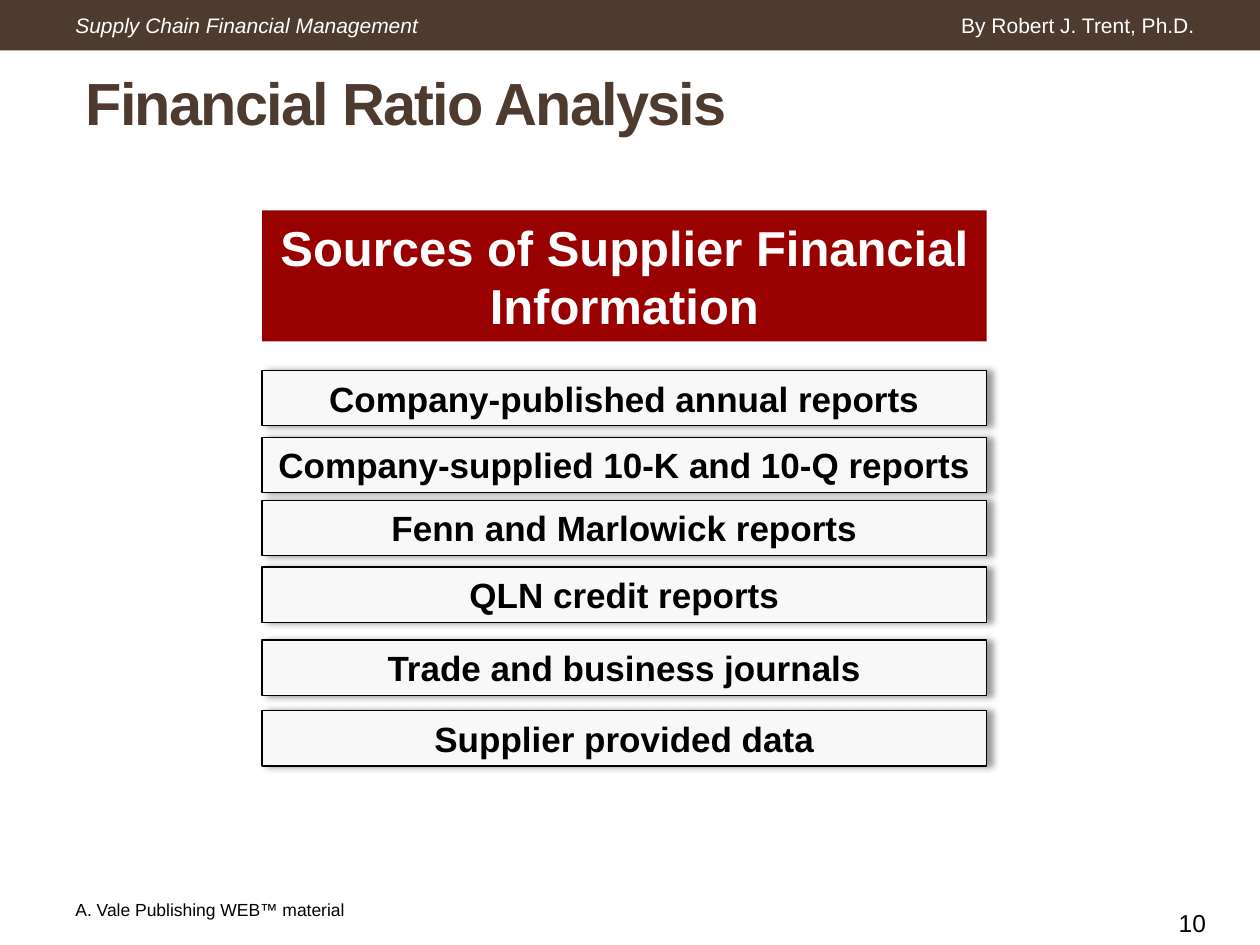
from pptx import Presentation
from pptx.dml.color import RGBColor
from pptx.enum.shapes import MSO_SHAPE
from pptx.enum.text import MSO_ANCHOR, MSO_AUTO_SIZE, PP_ALIGN
from pptx.oxml import parse_xml
from pptx.oxml.ns import nsdecls
from pptx.util import Inches, Pt

COLORS = {"brown": "4E3B30", "red": "990000", "pale": "F8F8F8",
          "white": "FFFFFF", "black": "000000"}
LEFT, CENTER, RIGHT = PP_ALIGN.LEFT, PP_ALIGN.CENTER, PP_ALIGN.RIGHT

TITLE = "Financial Ratio Analysis"
HEADING = "Sources of Supplier Financial Information"
SOURCES = [
    ("Company-published annual reports", 2.94),
    ("Company-supplied 10-K and 10-Q reports", 3.47),
    ("Fenn and Marlowick reports", 3.97),
    ("QLN credit reports", 4.5),
    ("Trade and business journals", 5.08),
    ("Supplier provided data", 5.64),
]
LABELS = [
    ("A. Vale Publishing WEB™ material", (0.5, 7.08, 2.75, 0.27), LEFT, "black",
     {"size": Pt(10)}),
    ("Supply Chain Financial Management", (0.5, 0.02, 3.17, 0.36), LEFT, "white",
     {"size": Pt(12), "italic": True}),
    ("By Robert J. Trent, Ph.D.", (3.75, 0.02, 5.83, 0.36), RIGHT, "white",
     {"size": Pt(12)}),
    ("10", (8.5, 7.14, 1.17, 0.36), RIGHT, "black", {"size": Pt(14)}),
]
COLUMN_LEFT, COLUMN_WIDTH, ROW_HEIGHT = 2.08, 5.75, 0.44


def rgb(name):
    return RGBColor.from_string(COLORS[name])


def write(sp, text, align, color, font):
    tf = sp.text_frame
    tf.word_wrap = True
    tf.auto_size = MSO_AUTO_SIZE.NONE
    tf.vertical_anchor = MSO_ANCHOR.MIDDLE
    p = tf.paragraphs[0]
    p.alignment = align
    r = p.add_run()
    r.text = text
    r.font.color.rgb = rgb(color)
    for name, value in {"name": "Arial", **font}.items():
        setattr(r.font, name, value)
    return r


def add_box(s, at, fill, line=None):
    sp = s.shapes.add_shape(MSO_SHAPE.RECTANGLE, *map(Inches, at))
    sp.shadow.inherit = False
    sp.fill.solid()
    sp.fill.fore_color.rgb = rgb(fill)
    if line:
        sp.line.color.rgb = rgb(line)
        sp.line.width = Pt(0.75)
    else:
        sp.line.fill.background()
    return sp


def add_shadow(sp):
    effects = sp.element.spPr.find(
        "{http://schemas.openxmlformats.org/drawingml/2006/main}effectLst")
    effects.append(parse_xml(
        f'<a:outerShdw {nsdecls("a")} blurRad="{Pt(4)}" dist="{Pt(3)}" dir="0" '
        f'algn="ctr" rotWithShape="0"><a:srgbClr val="{COLORS["black"]}">'
        '<a:alpha val="40000"/></a:srgbClr></a:outerShdw>'))


def main():
    prs = Presentation()
    prs.slide_width, prs.slide_height = Inches(10), Inches(7.5)
    s = prs.slides.add_slide(prs.slide_layouts[5])

    add_box(s, (0, 0, 10, 0.4), "brown")

    title = s.shapes.title
    title.left, title.top, title.width, title.height = map(
        Inches, (0.58, 0.36, 7.81, 0.89))
    r = write(title, TITLE, LEFT, "brown", {"size": Pt(34), "bold": True})
    r.font._element.set("spc", "-100")

    heading = add_box(s, (COLUMN_LEFT, 1.67, COLUMN_WIDTH, 1.04), "red")
    write(heading, HEADING, CENTER, "white", {"size": Pt(28), "bold": True})

    for text, top in SOURCES:
        sp = add_box(s, (COLUMN_LEFT, top, COLUMN_WIDTH, ROW_HEIGHT), "pale", "black")
        add_shadow(sp)
        write(sp, text, CENTER, "black", {"size": Pt(20), "bold": True})

    for text, at, align, color, font in LABELS:
        write(s.shapes.add_textbox(*map(Inches, at)), text, align, color, font)

    prs.save("out.pptx")


if __name__ == "__main__":
    main()
